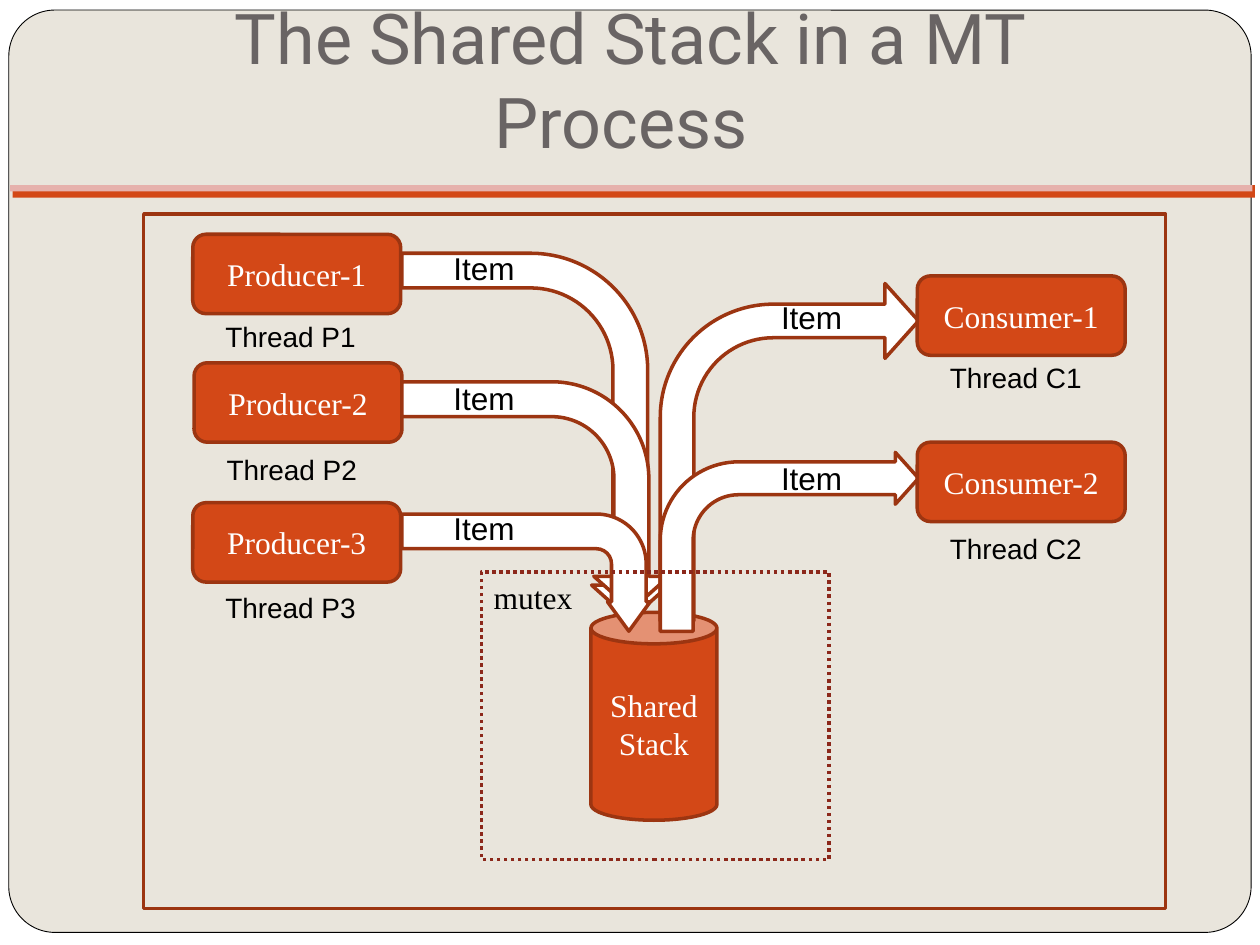
import pptx
import pptx.util
import pptx.dml.color
import pptx.enum.dml
import pptx.enum.shapes
import pptx.enum.text

Inches = pptx.util.Inches
SHAPES = pptx.enum.shapes.MSO_SHAPE
ANCHOR = pptx.enum.text.MSO_ANCHOR
ALIGN = pptx.enum.text.PP_ALIGN

PAPER, WHITE, BLACK = "E9E5DC", "FFFFFF", "000000"
ORANGE, RUST, PINK = "D34817", "9C3511", "E6B1AC"
BRICK, GREY = "8C281B", "696464"
SERIF, SANS, TITLE_FONT = "Times New Roman", "Arial", "Roboto"
NODE_WIDTH, NODE_HEIGHT = 1.65, 0.63


def color(value):
    """Turn a hex string into a colour."""
    return pptx.dml.color.RGBColor.from_string(value)


def add_shape(slide, kind, box, fill=None, line=None, width=2, adjustments=()):
    """Add a preset shape in a box of left, top, width and height."""
    shape = slide.shapes.add_shape(kind, *map(Inches, box))
    shape.shadow.inherit = False
    if fill:
        shape.fill.solid()
        shape.fill.fore_color.rgb = color(fill)
    else:
        shape.fill.background()
    if line:
        shape.line.color.rgb = color(line)
        shape.line.width = pptx.util.Pt(width)
    else:
        shape.line.fill.background()
    for index, value in enumerate(adjustments):
        shape.adjustments[index] = value
    return shape


def write(shape, lines, size, font, ink, align=ALIGN.CENTER, anchor=ANCHOR.MIDDLE):
    """Write one paragraph for each line of text."""
    frame = shape.text_frame
    frame.word_wrap = True
    frame.vertical_anchor = anchor
    for index, line in enumerate(lines):
        paragraph = frame.add_paragraph() if index else frame.paragraphs[0]
        paragraph.alignment = align
        run = paragraph.add_run()
        run.text = line
        run.font.size = pptx.util.Pt(size)
        run.font.name = font
        run.font.color.rgb = color(ink)


def add_caption(slide, box, text, size):
    """Add a plain black caption."""
    caption = slide.shapes.add_textbox(*map(Inches, box))
    write(caption, [text], size, SANS, BLACK, ALIGN.LEFT, ANCHOR.TOP)


def add_backdrop(slide, width, height):
    """Draw the rounded card and the double rule below the title."""
    slide.background.fill.solid()
    slide.background.fill.fore_color.rgb = color(PAPER)
    add_shape(slide, SHAPES.RECTANGLE, (0, 0, width, height), WHITE)
    card = (0.07, 0.08, width - 0.14, height - 0.18)
    add_shape(slide, SHAPES.ROUNDED_RECTANGLE, card, PAPER, BLACK, 0.5, [0.05])
    add_shape(slide, SHAPES.RECTANGLE, (0.1, 1.47, 9.86, 0.1), ORANGE)
    add_shape(slide, SHAPES.RECTANGLE, (0.08, 1.47, 9.86, 0.05), PINK)


def add_title(slide, box):
    """Add the title, resting on the bottom of its box."""
    title = slide.shapes.add_textbox(*map(Inches, box))
    title.text_frame.margin_bottom = Inches(0.1)
    write(title, ["The Shared Stack in a MT Process "], 40, TITLE_FONT, GREY,
          anchor=ANCHOR.BOTTOM)


def add_thread(slide, left, top, name, thread, thread_drop):
    """Draw a producer or consumer with its thread caption."""
    node = add_shape(slide, SHAPES.ROUNDED_RECTANGLE,
                     (left, top, NODE_WIDTH, NODE_HEIGHT), ORANGE, RUST)
    write(node, [name], 18, SERIF, WHITE)
    add_caption(slide, (left + 0.16, top + thread_drop, 1.34, 0.37), thread, 16)


def add_flow(slide, box, adjustments, item_left, item_top, downward=False):
    """Draw a bent arrow filling the box, with its item caption."""
    left, top, width, height = box
    if downward:
        shift = (width - height) / 2
        box = (left + shift, top - shift, height, width)
    arrow = add_shape(slide, SHAPES.BENT_ARROW, box, WHITE, RUST, 2, adjustments)
    arrow.rotation = 90 if downward else 0
    add_caption(slide, (item_left, item_top, 0.79, 0.4), "Item", 18)


def add_producers(slide, left, top):
    """Draw the producers and their arrows into the stack."""
    rows = [
        (0, 0, 0.63, 0.15, 2.12, 2.91, 0.07, (0.13, 0.145, 0.13, 0.438)),
        (0.01, 1.02, 0.66, 0.15, 2.12, 1.81, 0.08, (0.153, 0.165, 0.147, 0.426)),
        (0, 2.13, 0.65, 0.09, 1.97, 0.93, 0, (0.296, 0.182, 0.25, 0.426)),
    ]
    for number, row in enumerate(rows, 1):
        indent, drop, thread_drop, arrow_drop, width, height, item_drop, bend = row
        row_top = top + drop
        add_thread(slide, left + indent, row_top, f"Producer-{number}",
                   f"Thread P{number}", thread_drop)
        add_flow(slide, (left + 1.66, row_top + arrow_drop, width, height), bend,
                 left + 1.97, row_top + item_drop, downward=True)


def add_consumers(slide, left, top):
    """Draw the consumers and their arrows out of the stack."""
    rows = [
        (0, 0.62, 0.06, 2.68, 0.13, 0.13),
        (1.32, 0.66, 0.08, 1.42, 0.08, 0.184),
    ]
    for number, row in enumerate(rows, 1):
        drop, thread_drop, arrow_drop, height, item_drop, thickness = row
        row_top = top + drop
        add_flow(slide, (left - 2.04, row_top + arrow_drop, 2.05, height),
                 (thickness, 0.145, 0.13, 0.438), left - 1.18, row_top + item_drop)
        add_thread(slide, left, row_top, f"Consumer-{number}",
                   f"Thread C{number}", thread_drop)


def add_stack(slide, box):
    """Draw the shared stack as a cylinder."""
    stack = add_shape(slide, SHAPES.CAN, box, ORANGE, RUST)
    write(stack, ["Shared", "Stack"], 18, SERIF, WHITE)


def add_mutex(slide, box):
    """Draw the dotted mutex boundary."""
    mutex = add_shape(slide, SHAPES.RECTANGLE, box, line=BRICK)
    mutex.line.dash_style = pptx.enum.dml.MSO_LINE.ROUND_DOT
    write(mutex, ["mutex"], 18, SERIF, BLACK, ALIGN.LEFT, ANCHOR.TOP)


def main():
    """Build and save the slide."""
    presentation = pptx.Presentation()
    presentation.slide_width = Inches(10)
    presentation.slide_height = Inches(7.5)
    slide = presentation.slides.add_slide(presentation.slide_layouts[6])
    add_backdrop(slide, 10, 7.5)
    add_title(slide, (0.75, 0.36, 8.5, 1.03))
    add_stack(slide, (4.69, 4.86, 1, 1.65))
    add_producers(slide, 1.53, 1.86)
    add_consumers(slide, 7.28, 2.19)
    add_mutex(slide, (3.82, 4.54, 2.76, 2.28))
    add_shape(slide, SHAPES.RECTANGLE, (1.14, 1.7, 8.11, 5.51), line=RUST)
    presentation.save("out.pptx")


if __name__ == "__main__":
    main()
